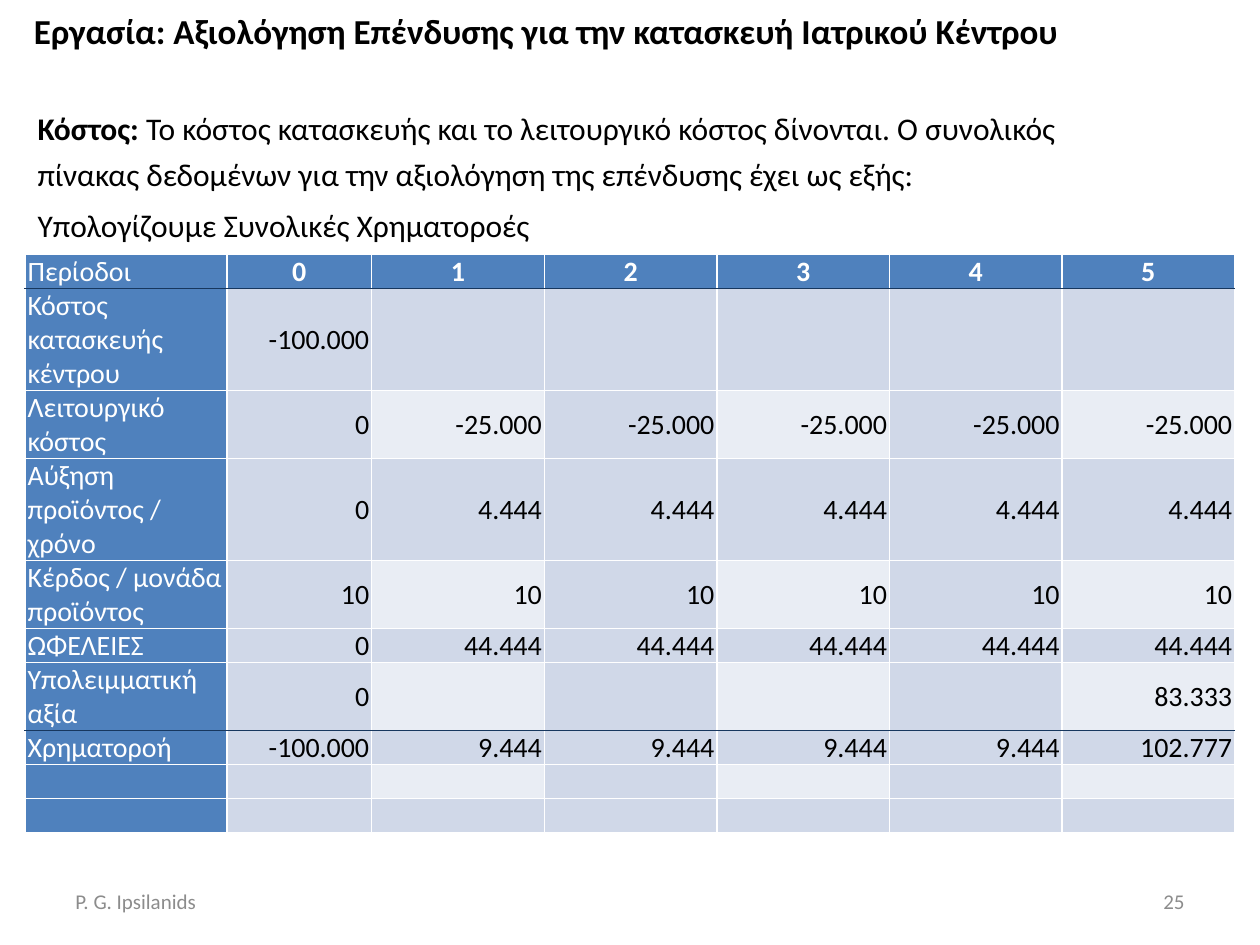
from lxml.etree import SubElement
from pptx import Presentation
from pptx.dml.color import RGBColor
from pptx.enum.text import MSO_ANCHOR as Anchor, PP_ALIGN as Align
from pptx.oxml.ns import qn
from pptx.util import Inches, Pt

FONT = "Calibri"
BLACK, WHITE, GREY = "000000", "FFFFFF", "8C8C8C"
HEADER_BLUE, BAND_DARK, BAND_LIGHT, RULE_NAVY = "4F81BD", "D0D8E8", "E9EDF4", "17375E"

# Table grid: each row is as tall as the lines of its label
COLUMN_WIDTHS = [1.6, 1.15] + [1.37] * 5
LINE_HEIGHT = 0.27
RULED_ROWS = (0, 6)  # rows closed by a dark rule
PERIODS = 5
CASH_FLOWS = [
    # label, lines, values for periods 0 to 5
    ("Περίοδοι", 1, ["0", "1", "2", "3", "4", "5"]),
    ("Κόστος κατασκευής κέντρου", 3, ["-100.000"] + [""] * PERIODS),
    ("Λειτουργικό κόστος", 2, ["0"] + ["-25.000"] * PERIODS),
    ("Αύξηση προϊόντος / χρόνο", 3, ["0"] + ["4.444"] * PERIODS),
    ("Κέρδος / μονάδα προϊόντος", 2, ["10"] + ["10"] * PERIODS),
    ("ΩΦΕΛΕΙΕΣ", 1, ["0"] + ["44.444"] * PERIODS),
    ("Υπολειμματική αξία", 2, ["0"] + [""] * (PERIODS - 1) + ["83.333"]),
    ("Χρηματοροή", 1, ["-100.000"] + ["9.444"] * (PERIODS - 1) + ["102.777"]),
    ("", 1, [""] * (PERIODS + 1)),
    ("", 1, [""] * (PERIODS + 1)),
]


def rgb(hex_color):
    return RGBColor.from_string(hex_color)


def write(paragraph, text, size=16, color=BLACK, bold=False, align=Align.LEFT):
    """Add formatted text to a paragraph; a newline becomes a line break."""
    paragraph.alignment = align
    if not text:
        SubElement(paragraph._p, qn("a:endParaRPr"), sz=str(size * 100))
        return
    for index, line in enumerate(text.split("\n")):
        if index:
            paragraph.add_line_break()
        run = paragraph.add_run()
        run.text = line
        run.font.name = FONT
        run.font.size = Pt(size)
        run.font.bold = bold
        run.font.color.rgb = rgb(color)


def add_text_frame(slide, left, top, width, height, anchor=Anchor.MIDDLE):
    box = slide.shapes.add_textbox(*map(Inches, (left, top, width, height)))
    frame = box.text_frame
    frame.word_wrap = True
    frame.vertical_anchor = anchor
    return frame


def add_explanation(slide):
    frame = add_text_frame(slide, 0.2, 0.76, 9.53, 1.5, Anchor.TOP)
    cost, next_step = frame.paragraphs[0], frame.add_paragraph()
    write(cost, "Κόστος: ", size=18, bold=True)
    write(cost, "Το κόστος κατασκευής και το λειτουργικό κόστος δίνονται. Ο συνολικός\n"
                "πίνακας δεδομένων για την αξιολόγηση της επένδυσης έχει ως εξής:", size=18)
    write(next_step, "Υπολογίζουμε Συνολικές Χρηματοροές", size=18)
    cost.line_spacing = next_step.line_spacing = 1.2
    next_step.space_before = Pt(3.6)


def set_borders(cell, row):
    top = RULE_NAVY if row - 1 in RULED_ROWS else WHITE
    bottom = RULE_NAVY if row in RULED_ROWS else WHITE
    properties = cell._tc.get_or_add_tcPr()
    for side, color in (("L", WHITE), ("R", WHITE), ("T", top), ("B", bottom)):
        line = SubElement(properties, qn(f"a:ln{side}"), w=str(Pt(1)))
        fill = SubElement(line, qn("a:solidFill"))
        SubElement(fill, qn("a:srgbClr"), val=color)


def cell_fill(row, column):
    if row == 0 or column == 0:
        return HEADER_BLUE
    return BAND_LIGHT if row % 2 == 0 and column % 2 == 0 else BAND_DARK


def fill_cell(cell, text, row, column):
    cell.margin_left = cell.margin_right = Inches(0.02)
    cell.margin_top = cell.margin_bottom = 0
    set_borders(cell, row)
    cell.fill.solid()
    cell.fill.fore_color.rgb = rgb(cell_fill(row, column))
    paragraph = cell.text_frame.paragraphs[0]
    if column == 0:
        write(paragraph, text, color=WHITE)
    elif row == 0:
        write(paragraph, text, color=WHITE, bold=True, align=Align.CENTER)
    else:
        cell.vertical_anchor = Anchor.MIDDLE
        write(paragraph, text, align=Align.RIGHT)


def add_cash_flow_table(slide, left, top):
    height = LINE_HEIGHT * sum(lines for _, lines, _ in CASH_FLOWS)
    table = slide.shapes.add_table(
        len(CASH_FLOWS), len(COLUMN_WIDTHS), Inches(left), Inches(top),
        Inches(sum(COLUMN_WIDTHS)), Inches(height)).table
    table.horz_banding = False
    for column, width in zip(table.columns, COLUMN_WIDTHS):
        column.width = Inches(width)
    for row, (label, lines, values) in enumerate(CASH_FLOWS):
        table.rows[row].height = Inches(lines * LINE_HEIGHT)
        for column, text in enumerate([label] + values):
            fill_cell(table.cell(row, column), text, row, column)


def main():
    deck = Presentation()
    deck.slide_width, deck.slide_height = Inches(10), Inches(7.5)
    slide = deck.slides.add_slide(deck.slide_layouts[6])

    # Title
    title = add_text_frame(slide, 0.12, 0.05, 8.43, 0.38)
    write(title.paragraphs[0],
          "Εργασία: Αξιολόγηση Επένδυσης για την κατασκευή Ιατρικού Κέντρου",
          size=20, bold=True, align=Align.CENTER)

    # Table and the text above it
    add_cash_flow_table(slide, 0.2, 2.02)
    add_explanation(slide)

    # Footer: author and page number
    for left, text, align in ((0.5, "P. G. Ipsilanids", Align.LEFT),
                              (7.17, "25", Align.RIGHT)):
        footer = add_text_frame(slide, left, 6.95, 2.33, 0.4)
        write(footer.paragraphs[0], text, size=12, color=GREY, align=align)

    deck.save("out.pptx")


if __name__ == "__main__":
    main()
